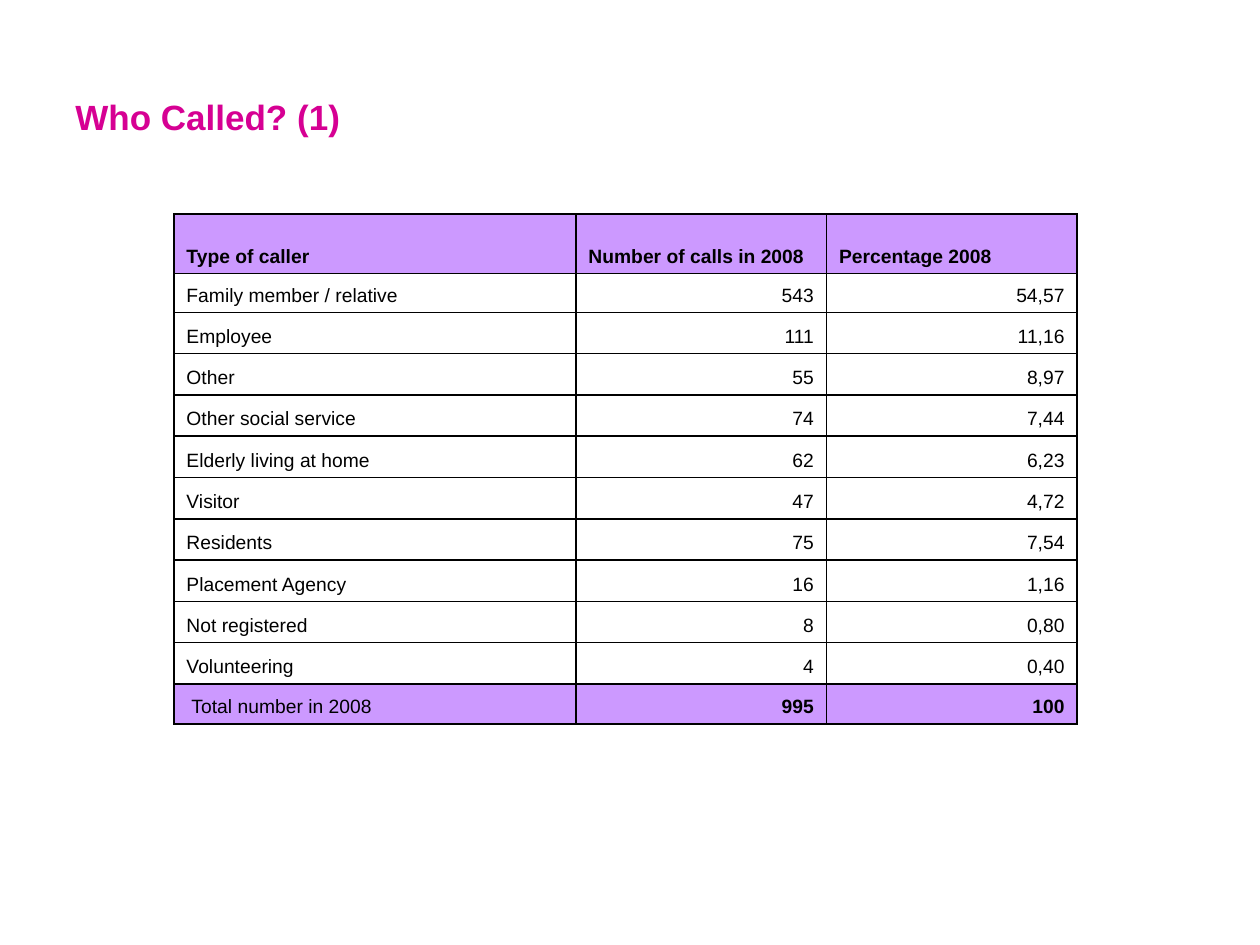
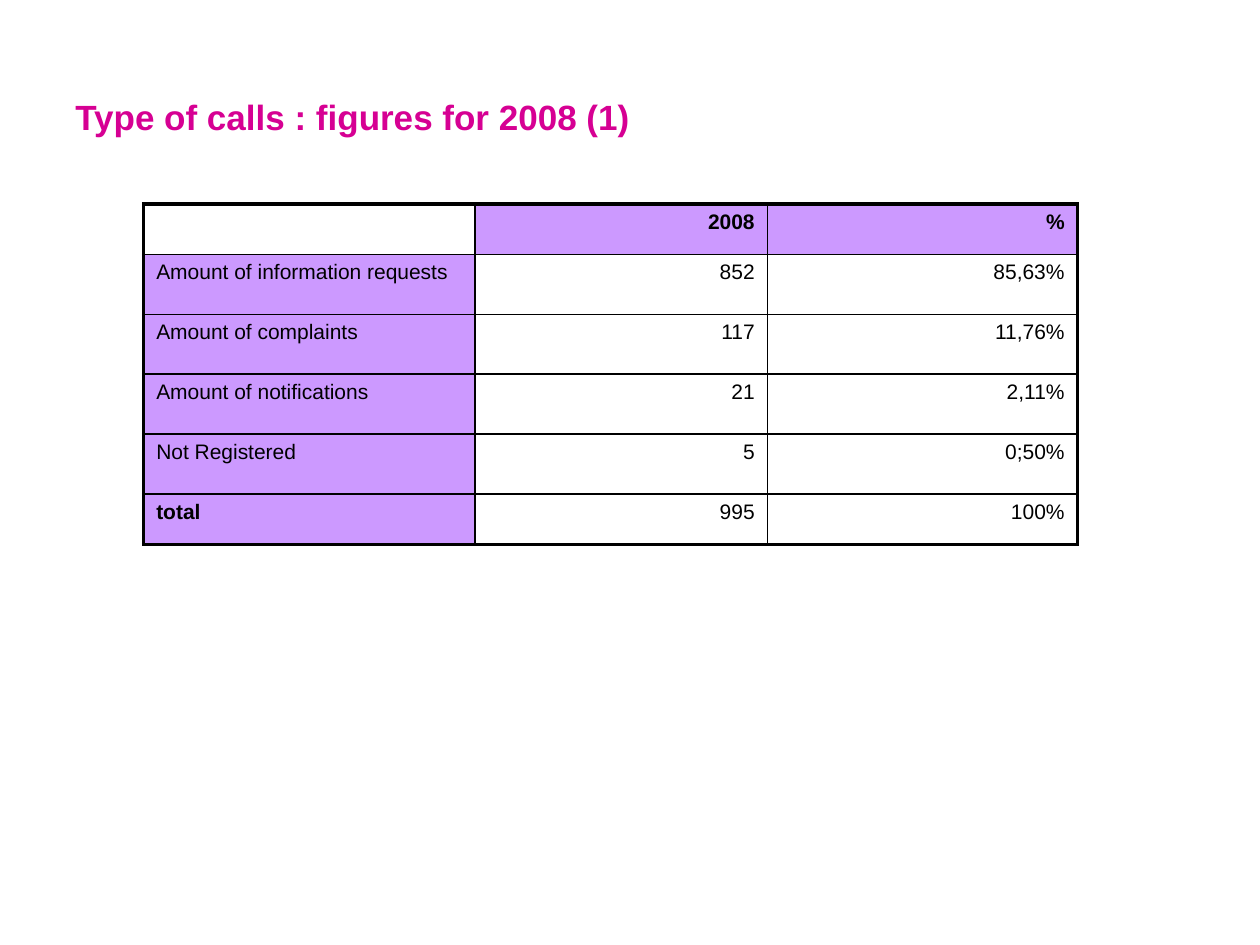
from dataclasses import dataclass

from lxml import etree
from pptx import Presentation
from pptx.dml.color import RGBColor
from pptx.enum.text import MSO_ANCHOR, PP_ALIGN
from pptx.oxml.ns import qn
from pptx.slide import Slide
from pptx.table import _Cell
from pptx.text.text import TextFrame
from pptx.util import Inches, Pt

LEFT, RIGHT = PP_ALIGN.LEFT, PP_ALIGN.RIGHT
TOP, MIDDLE, BOTTOM = MSO_ANCHOR.TOP, MSO_ANCHOR.MIDDLE, MSO_ANCHOR.BOTTOM

FONT = "Arial"
COLORS = {"title": "D60093", "text": "000000", "line": "000000", "band": "CC99FF"}
THIN = 1


@dataclass(frozen=True)
class Grid:
    """A table; bands, bold and right hold (row, column) positions."""
    left: float
    top: float
    cols: list[float]
    rows: list[float]
    cells: list[tuple[str, str, str]]
    bands: set[tuple[int, int]]
    bold: set[tuple[int, int]]
    right: set[tuple[int, int]]
    size: float
    anchor: MSO_ANCHOR
    frame: float


def write(frame: TextFrame, text: str, *, size: float, color: str = "text",
          bold: bool = False, align: PP_ALIGN = LEFT) -> None:
    para = frame.paragraphs[0]
    para.alignment = align
    run = para.add_run()
    run.text = text
    font = run.font
    font.name, font.size, font.bold = FONT, Pt(size), bold
    font.color.rgb = RGBColor.from_string(COLORS[color])


def add_title(slide: Slide, text: str) -> None:
    box = slide.shapes.add_textbox(Inches(0.5), Inches(0.3), Inches(9), Inches(1.25))
    frame = box.text_frame
    frame.word_wrap = True
    frame.vertical_anchor = MIDDLE
    write(frame, text, size=20, color="title", bold=True)


def add_edges(cell: _Cell, widths: dict[str, float]) -> None:
    """Draw cell borders; must run before the fill is set."""
    props = cell._tc.get_or_add_tcPr()
    for side, width in widths.items():
        line = etree.SubElement(props, qn(f"a:ln{side}"), w=str(Pt(width)))
        fill = etree.SubElement(line, qn("a:solidFill"))
        etree.SubElement(fill, qn("a:srgbClr"), val=COLORS["line"])


def add_grid(slide: Slide, grid: Grid) -> None:
    count, span = len(grid.rows), len(grid.cols)
    shape = slide.shapes.add_table(
        count, span, Inches(grid.left), Inches(grid.top),
        Inches(sum(grid.cols)), Inches(sum(grid.rows)))
    table = shape.table
    table.first_row = table.horz_banding = False
    for col, width in zip(table.columns, grid.cols):
        col.width = Inches(width)
    for row, height in zip(table.rows, grid.rows):
        row.height = Inches(height)
    for r, texts in enumerate(grid.cells):
        for c, text in enumerate(texts):
            cell, spot = table.cell(r, c), (r, c)
            outer = {"L": c == 0, "R": c == span - 1, "T": r == 0, "B": r == count - 1}
            add_edges(cell, {s: grid.frame if out else THIN for s, out in outer.items()})
            if spot in grid.bands:
                cell.fill.solid()
                cell.fill.fore_color.rgb = RGBColor.from_string(COLORS["band"])
            else:
                cell.fill.background()
            cell.vertical_anchor = grid.anchor
            write(cell.text_frame, text, size=grid.size, bold=spot in grid.bold,
                  align=RIGHT if spot in grid.right else LEFT)


CALLERS = [
    ("Type of caller", "Number of calls in 2008", "Percentage 2008"),
    ("Family member / relative", "543", "54,57"),
    ("Employee", "111", "11,16"),
    ("Other", "55", "8,97"),
    ("Other social service", "74", "7,44"),
    ("Elderly living at home", "62", "6,23"),
    ("Visitor", "47", "4,72"),
    ("Residents", "75", "7,54"),
    ("Placement Agency", "16", "1,16"),
    ("Not registered", "8", "0,80"),
    ("Volunteering", "4", "0,40"),
    (" Total number in 2008", "995", "100"),
]
CALLS = [
    ("", "2008", "%"),
    ("Amount of information requests", "852", "85,63%"),
    ("Amount of complaints", "117", "11,76%"),
    ("Amount of notifications", "21", "2,11%"),
    ("Not Registered", "5", "0;50%"),
    ("total", "995", "100%"),
]


def caller_grid() -> Grid:
    last = len(CALLERS) - 1
    head = {(0, c) for c in range(3)}
    total = {(last, c) for c in range(3)}
    body = (4.05 - 0.47 - 0.31 - 0.32) / 9
    return Grid(
        left=1.38, top=1.7, cols=[3.19, 1.99, 1.99],
        rows=[0.47, 0.31] + [body] * 9 + [0.32], cells=CALLERS,
        bands=head | total, bold=head | total - {(last, 0)},
        right={(r, c) for r in range(1, last + 1) for c in (1, 2)},
        size=11, anchor=BOTTOM, frame=THIN)


def call_grid() -> Grid:
    count = len(CALLS)
    head = {(0, 1), (0, 2)}
    return Grid(
        left=1.14, top=1.62, cols=[2.63, 2.32, 2.46],
        rows=[0.39] + [1.9 / 4] * 4 + [0.4], cells=CALLS,
        bands=head | {(r, 0) for r in range(1, count)},
        bold=head | {(count - 1, 0)},
        right={(r, c) for r in range(count) for c in (1, 2)},
        size=12, anchor=TOP, frame=2.25)


def main() -> None:
    deck = Presentation()
    deck.slide_width, deck.slide_height = Inches(10), Inches(7.5)
    pages = [("Who Called? (1)", caller_grid()),
             ("Type of calls : figures for 2008 (1)", call_grid())]
    for title, grid in pages:
        slide = deck.slides.add_slide(deck.slide_layouts[6])
        add_title(slide, title)
        add_grid(slide, grid)
    deck.save("out.pptx")


if __name__ == "__main__":
    main()
